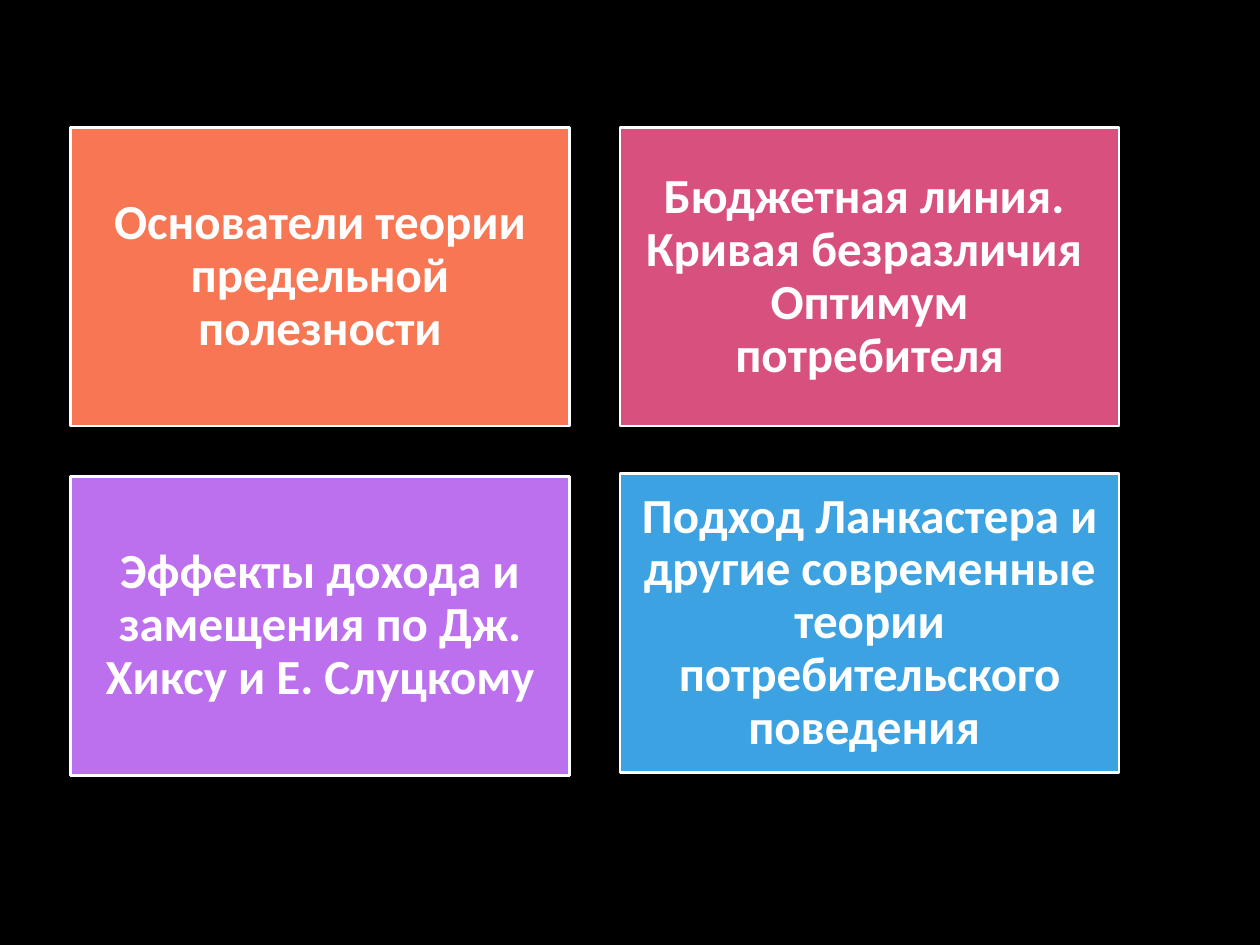
"""Build a slide with four coloured topic cards on consumer theory."""
import pptx
import pptx.dml.color
import pptx.enum.shapes
import pptx.enum.text
import pptx.util

Cm = pptx.util.Cm

BACKGROUND = "000000"
WHITE = "FFFFFF"
CARDS = [
    {"fill": "F77754", "lines": ["Основатели теории предельной полезности"]},
    {"fill": "D8507E", "lines": ["Бюджетная линия. ", "Кривая безразличия ", "Оптимум потребителя"]},
    {"fill": "BC70EE", "lines": ["Эффекты дохода и замещения по Дж. Хиксу и Е. Слуцкому"]},
    {"fill": "3CA2E2", "lift": 0.06,
     "lines": ["Подход Ланкастера и другие современные теории потребительского поведения "]},
]
COLUMNS = 2
LEFT, TOP = 1.42, 2.57
WIDTH, HEIGHT = 10.06, 6.02
GAP = 1.02
INSET = Cm(0.3)

FRAME_FORMAT = {
    "word_wrap": True,
    "vertical_anchor": pptx.enum.text.MSO_ANCHOR.MIDDLE,
    "margin_left": INSET,
    "margin_top": INSET,
    "margin_right": INSET,
    "margin_bottom": INSET,
}
PARAGRAPH_FORMAT = {"alignment": pptx.enum.text.PP_ALIGN.CENTER, "line_spacing": 0.9}
FONT_FORMAT = {"name": "Calibri", "size": pptx.util.Pt(28), "bold": True}


def set_attributes(target, values):
    for name, value in values.items():
        setattr(target, name, value)


def paint(fill, color):
    fill.solid()
    fill.fore_color.rgb = pptx.dml.color.RGBColor.from_string(color)


def add_card(slide, index, card):
    row, column = divmod(index, COLUMNS)
    left = LEFT + column * (WIDTH + GAP)
    top = TOP + row * (HEIGHT + GAP) - card.get("lift", 0)
    shape = slide.shapes.add_shape(
        pptx.enum.shapes.MSO_SHAPE.RECTANGLE, Cm(left), Cm(top), Cm(WIDTH), Cm(HEIGHT))
    shape.shadow.inherit = False
    paint(shape.fill, card["fill"])
    paint(shape.line.fill, WHITE)
    shape.line.width = pptx.util.Pt(1.5)
    set_attributes(shape.text_frame, FRAME_FORMAT)
    paragraph = shape.text_frame.paragraphs[0]
    set_attributes(paragraph, PARAGRAPH_FORMAT)
    for number, line in enumerate(card["lines"]):
        if number:
            paragraph.add_line_break()
        run = paragraph.add_run()
        run.text = line
        set_attributes(run.font, FONT_FORMAT)
        paint(run.font.fill, WHITE)


def main():
    presentation = pptx.Presentation()
    presentation.slide_width, presentation.slide_height = Cm(25.4), Cm(19.05)
    slide = presentation.slides.add_slide(presentation.slide_layouts[6])
    paint(slide.background.fill, BACKGROUND)
    for index, card in enumerate(CARDS):
        add_card(slide, index, card)
    presentation.save("out.pptx")


if __name__ == "__main__":
    main()
